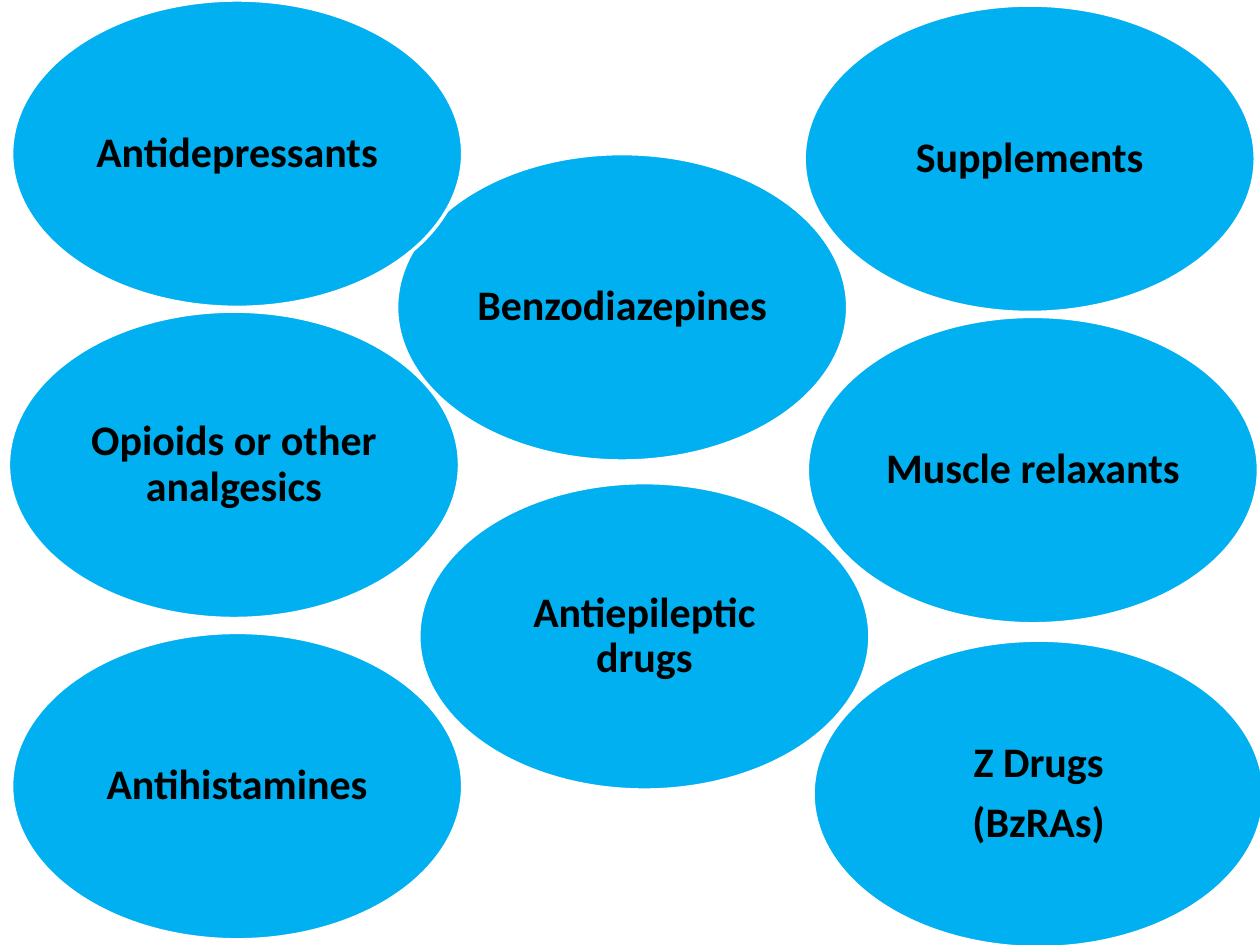
import pptx
import pptx.dml.color
import pptx.enum.shapes
import pptx.enum.text
import pptx.util

Pt = pptx.util.Pt

COLORS = {"bubble": "00B0F0", "outline": "FFFFFF", "text": "000000"}
BUBBLE_WIDTH, BUBBLE_HEIGHT = 257.8, 175.7

# Left, top and paragraphs of each bubble, from back to front
BUBBLES = [
    (226.6, 87.8, ["Benzodiazepines"]),
    (6.6, 361.4, ["Antihistamines"]),
    (4.8, 177.8, ["Opioids or other analgesics"]),
    (464.6, 365.8, ["Z Drugs", "(BzRAs)"]),
    (6.6, 0, ["Antidepressants"]),
    (461.3, 180.8, ["Muscle relaxants"]),
    (459.5, 2.9, ["Supplements"]),
    (239.3, 275.8, ["Antiepileptic drugs"]),
]


def color(name):
    return pptx.dml.color.RGBColor.from_string(COLORS[name])


def write_label(text_frame, lines):
    text_frame.word_wrap = True
    text_frame.vertical_anchor = pptx.enum.text.MSO_ANCHOR.MIDDLE
    for side in ("left", "right", "top", "bottom"):
        setattr(text_frame, f"margin_{side}", Pt(1))
    text_frame.text = "\n".join(lines)
    for paragraph in text_frame.paragraphs:
        paragraph.alignment = pptx.enum.text.PP_ALIGN.CENTER
        paragraph.line_spacing = 0.9
        paragraph.space_after = Pt(8.4)
        paragraph.font.name = "Calibri"
        paragraph.font.size = Pt(24)
        paragraph.font.bold = True
        paragraph.font.color.rgb = color("text")


def add_bubble(slide, left, top, lines):
    shape = slide.shapes.add_shape(
        pptx.enum.shapes.MSO_SHAPE.OVAL,
        Pt(left), Pt(top), Pt(BUBBLE_WIDTH), Pt(BUBBLE_HEIGHT),
    )
    shape.shadow.inherit = False
    shape.fill.solid()
    shape.fill.fore_color.rgb = color("bubble")
    shape.line.color.rgb = color("outline")
    shape.line.width = Pt(2)
    write_label(shape.text_frame, lines)


def main():
    presentation = pptx.Presentation()
    presentation.slide_width, presentation.slide_height = Pt(720), Pt(540)

    # The slide has no title, so it uses the blank layout
    slide = presentation.slides.add_slide(presentation.slide_layouts[6])

    # Drug classes
    for left, top, lines in BUBBLES:
        add_bubble(slide, left, top, lines)

    presentation.save("out.pptx")


if __name__ == "__main__":
    main()
